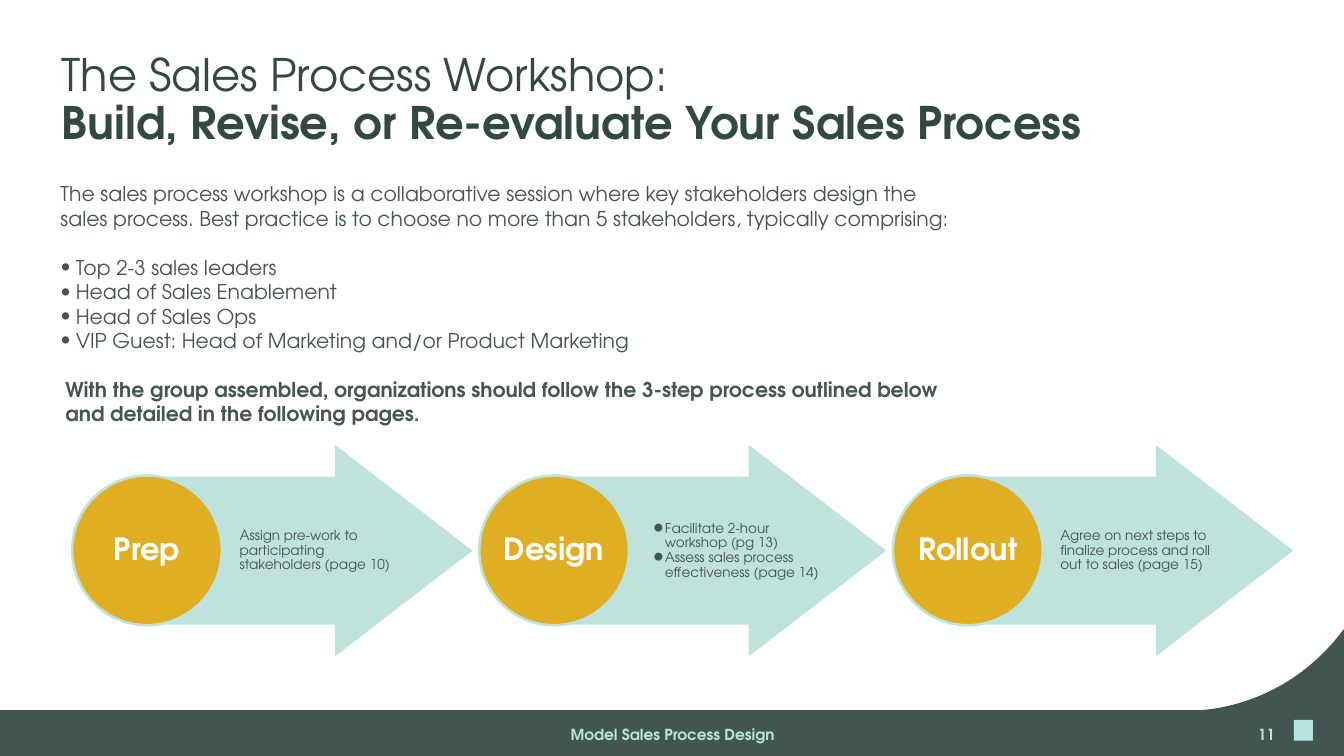
from lxml import etree
from pptx import Presentation
from pptx.dml.color import RGBColor as RGB
from pptx.enum.shapes import MSO_SHAPE as SHAPE
from pptx.enum.text import MSO_ANCHOR as ANCHOR, PP_ALIGN as ALIGN
from pptx.oxml.ns import qn
from pptx.util import Inches, Pt

W, H = 21.99, 12.37
FONT = "TeX Gyre Adventor"
COLORS = {
    "band": "415651", "mint": "B5E5DC", "arrow": "BFE3DC", "gold": "DFAE23",
    "title": "324943", "body": "455550", "white": "FFFFFF",
}
STEPS = [
    (1.18, 2.57, "Prep", ["Assign pre-work to participating stakeholders (page 10)"], False),
    (7.84, 9.34, "Design", ["Facilitate 2-hour workshop (pg 13)",
                            "Assess sales process effectiveness (page 14)"], True),
    (14.61, 16, "Rollout",
     ["Agree on next steps to finalize process and roll out to sales (page 15)"], False),
]
ROLES = ["Top 2-3 sales leaders", "Head of Sales Enablement", "Head of Sales Ops",
         "VIP Guest: Head of Marketing and/or Product Marketing"]


def set_all(obj, values):
    for name, value in values.items():
        setattr(obj, name, value)


def paint(sp, fill, line=None):
    sp.shadow.inherit = False
    sp.fill.solid()
    sp.fill.fore_color.rgb = RGB.from_string(COLORS[fill])
    if line:
        sp.line.color.rgb = RGB.from_string(COLORS[line])
        sp.line.width = Pt(3)
    else:
        sp.line.fill.background()


def frame(sp, anchor=ANCHOR.MIDDLE, margins=(0, 0), wrap=True):
    side, end = map(Inches, margins)
    tf = sp.text_frame
    set_all(tf, {"word_wrap": wrap, "vertical_anchor": anchor, "margin_left": side,
                 "margin_right": side, "margin_top": end, "margin_bottom": end})
    return tf


def text_box(slide, box, **layout):
    return frame(slide.shapes.add_textbox(*map(Inches, box)), **layout)


def indent(p, left, hanging=0, bullet=None):
    pPr = p._p.get_or_add_pPr()
    pPr.set("marL", str(Inches(left)))
    pPr.set("indent", str(Inches(hanging)))
    if bullet:
        clr = etree.SubElement(pPr, qn("a:buClr"))
        etree.SubElement(clr, qn("a:srgbClr")).set("val", COLORS["body"])
        etree.SubElement(pPr, qn("a:buFont")).set("typeface", FONT)
        etree.SubElement(pPr, qn("a:buChar")).set("char", bullet)


def add_run(p, text, size, color, bold=False):
    r = p.add_run()
    r.text = text
    set_all(r.font, {"name": FONT, "size": Pt(size), "bold": bold})
    r.font.color.rgb = RGB.from_string(COLORS[color])


def next_paragraph(tf):
    p = tf.paragraphs[0]
    return tf.add_paragraph() if p.runs else p


def title(slide, box):
    tf = text_box(slide, box, anchor=ANCHOR.BOTTOM, margins=(0.1, 0.05))
    p = tf.paragraphs[0]
    p.line_spacing = 0.9
    add_run(p, "The Sales Process Workshop:", 52.8, "title")
    p.add_line_break()
    add_run(p, "Build, Revise, or Re-evaluate Your Sales Process", 52.8, "title", True)


def body(slide, box):
    tf = text_box(slide, box, anchor=ANCHOR.TOP)
    gap = Pt(28.8)
    add_run(tf.paragraphs[0], "The sales process workshop is a collaborative session where key "
            "stakeholders design the sales process. Best practice is to choose no more than "
            "5 stakeholders, typically comprising:", 24, "body")
    for i, role in enumerate(ROLES):
        p = next_paragraph(tf)
        indent(p, 0.25, -0.29, "•")
        p.space_before = Pt(0) if i else gap
        add_run(p, role, 24, "body")
    p = next_paragraph(tf)
    indent(p, 0.08)
    p.space_before = gap
    add_run(p, "With the group assembled, organizations should follow the 3-step process "
            "outlined below and detailed in the following pages.", 24, "body", True)


def step_arrow(slide, box, lines, bulleted):
    x, y, w, h = box
    sp = slide.shapes.add_shape(SHAPE.RIGHT_ARROW, *map(Inches, box))
    sp.adjustments[0], sp.adjustments[1] = 0.7, 0.65
    paint(sp, "arrow")
    tf = text_box(slide, (x + 1.35, y + 0.69, w - 2.42, h - 1.38))
    for line in lines:
        p = next_paragraph(tf)
        if bulleted:
            indent(p, 0.19, -0.24, "●")
        p.line_spacing = 0.9
        add_run(p, line, 16, "body")


def step_circle(slide, box, name):
    sp = slide.shapes.add_shape(SHAPE.OVAL, *map(Inches, box))
    paint(sp, "gold", "arrow")
    p = frame(sp, wrap=False).paragraphs[0]
    set_all(p, {"alignment": ALIGN.CENTER, "line_spacing": 0.9})
    add_run(p, name, 36, "white", True)


def process(slide, top):
    for circle_x, arrow_x, name, lines, bulleted in STEPS:
        step_arrow(slide, (arrow_x, top, 5.16, 3.46), lines, bulleted)
        step_circle(slide, (circle_x, top + 0.5, 2.45, 2.45), name)


def bezier(points, steps=32):
    for i in range(1, steps + 1):
        t = i / steps
        weights = ((1 - t) ** 3, 3 * t * (1 - t) ** 2, 3 * t * t * (1 - t), t ** 3)
        yield tuple(sum(k * pt[axis] for k, pt in zip(weights, points)) for axis in (0, 1))


def footer(slide, box):
    x, y, w, h = box
    right, bottom, edge = x + w, y + h, y + 1.33
    start = (right - 2.4, edge)
    curve = bezier([start, start, (right - 0.99, edge + 0.01), (right, y)])
    outline = [(x, bottom), (x, edge), start, *curve]
    fb = slide.shapes.build_freeform(Inches(right), Inches(bottom))
    fb.add_line_segments([(Inches(px), Inches(py)) for px, py in outline])
    paint(fb.convert_to_shape(), "band")
    mark = (right - 0.82, bottom - 0.59, 0.31, 0.34)
    paint(slide.shapes.add_shape(SHAPE.RECTANGLE, *map(Inches, mark)), "mint")
    labels = [("Model Sales Process Design", 7.31, 7.39, ALIGN.CENTER),
              ("11", 20.41, 0.55, ALIGN.RIGHT)]
    for text, left, width, align in labels:
        tf = text_box(slide, (x + left, bottom - 0.53, width, 0.35), margins=(0.1, 0.05))
        p = tf.paragraphs[0]
        p.alignment = align
        add_run(p, text, 18, "mint", True)


def main():
    prs = Presentation()
    set_all(prs, {"slide_width": Inches(W), "slide_height": Inches(H)})
    slide = prs.slides.add_slide(prs.slide_layouts[6])
    footer(slide, (0, 10.29, W, 2.08))
    title(slide, (0.91, 0.79, 20.14, 1.7))
    body(slide, (0.99, 2.97, 14.73, 3.79))
    process(slide, 7.28)
    prs.save("out.pptx")


if __name__ == "__main__":
    main()
